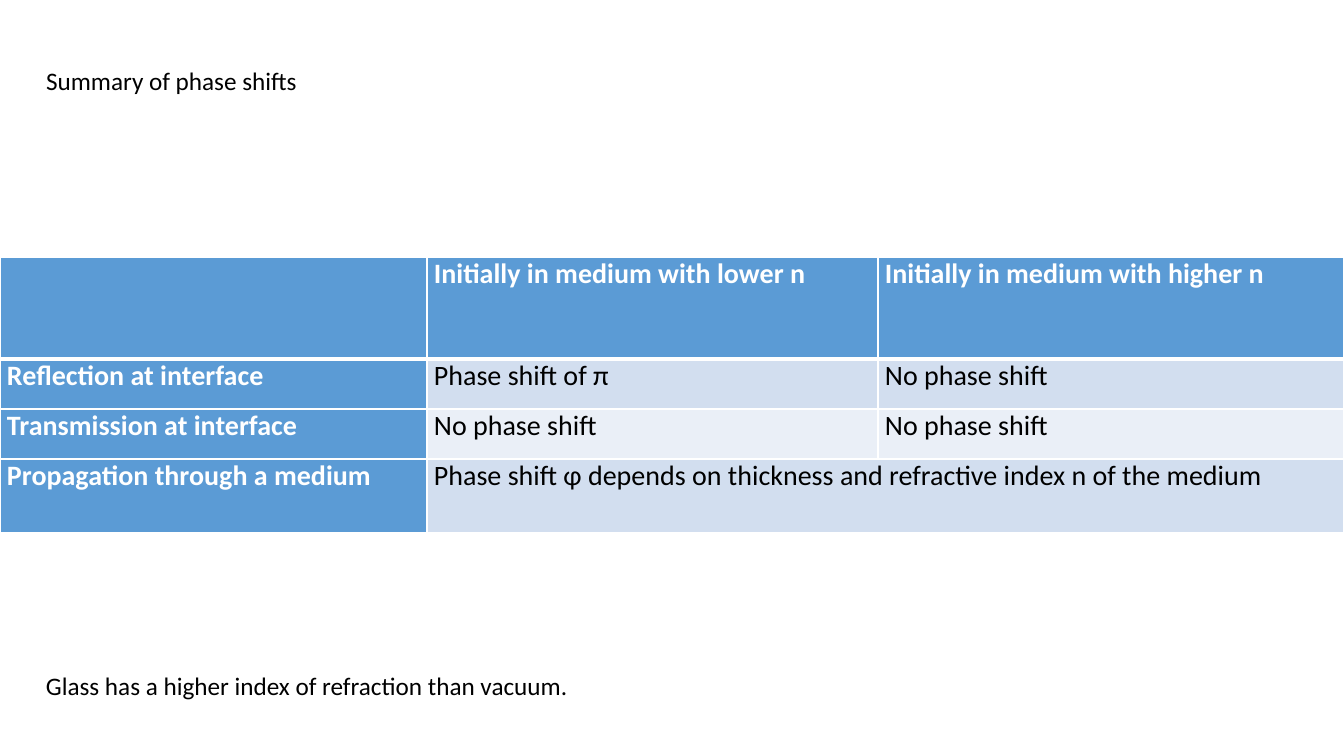
from pptx import Presentation
from pptx.dml.color import RGBColor
from pptx.enum.text import MSO_ANCHOR, PP_ALIGN
from pptx.oxml import parse_xml
from pptx.oxml.ns import nsdecls
from pptx.util import Emu, Pt

WHITE = RGBColor(0xFF, 0xFF, 0xFF)
BLACK = RGBColor(0, 0, 0)
BLUE = RGBColor(0x5B, 0x9B, 0xD5)
BANDS = [RGBColor(0xD2, 0xDE, 0xEF), RGBColor(0xEA, 0xEF, 0xF7)]
FONT = "Calibri"

COLS = [427, 451, 466]
ROWS = [102, 50, 50, 74]
CELLS = [
    ["", "Initially in medium with lower n", "Initially in medium with higher n"],
    ["Reflection at interface", "Phase shift of π", "No phase shift"],
    ["Transmission at interface", "No phase shift", "No phase shift"],
    ["Propagation through a medium",
     "Phase shift φ depends on thickness and refractive index n of the medium", ""],
]


def px(n):
    return Emu(round(n * 914400 / 100.8))


def style(para, size, color, bold=False):
    font = para.font
    font.name, font.size, font.bold = FONT, Pt(size), bold
    font.color.rgb = color


def add_line(shape, text, box):
    """Fill a title or text box with one line of plain text."""
    shape.left, shape.top, shape.width, shape.height = map(px, box)
    frame = shape.text_frame
    frame.text = text
    frame.word_wrap = True
    frame.vertical_anchor = MSO_ANCHOR.TOP
    para = frame.paragraphs[0]
    para.alignment = PP_ALIGN.LEFT
    para.line_spacing = 1.0
    para.space_before = Pt(0)
    style(para, 18, BLACK)


def add_edges(cell, row):
    """Draw white cell borders, thick between header and body."""
    props = cell._tc.get_or_add_tcPr()
    thick = {0: "B", 1: "T"}.get(row)
    for side in "LRTB":
        width = Pt(3 if side == thick else 1)
        props.append(parse_xml(
            f'<a:ln{side} {nsdecls("a")} w="{width}"><a:solidFill>'
            f'<a:srgbClr val="{WHITE}"/></a:solidFill></a:ln{side}>'))


def fill_cell(cell, text, row, col):
    head = row == 0 or col == 0
    add_edges(cell, row)
    cell.fill.solid()
    cell.fill.fore_color.rgb = BLUE if head else BANDS[(row - 1) % 2]
    cell.margin_left = cell.margin_right = px(7)
    cell.margin_top = cell.margin_bottom = 0
    cell.text = text
    para = cell.text_frame.paragraphs[0]
    para.alignment = PP_ALIGN.JUSTIFY
    style(para, 20, WHITE if head else BLACK, head)


def add_grid(slide, left, top):
    """Place the table of phase shifts."""
    table = slide.shapes.add_table(
        len(ROWS), len(COLS), px(left), px(top), px(sum(COLS)), px(sum(ROWS))).table
    for col, width in zip(table.columns, COLS):
        col.width = px(width)
    for row, height in zip(table.rows, ROWS):
        row.height = px(height)
    for r, line in enumerate(CELLS):
        for c, text in enumerate(line):
            fill_cell(table.cell(r, c), text, r, c)
    table.cell(3, 1).merge(table.cell(3, 2))


def main():
    deck = Presentation()
    deck.slide_width, deck.slide_height = px(1344), px(756)
    slide = deck.slides.add_slide(deck.slide_layouts[5])

    # Table across the full width
    add_grid(slide, 0, 257)

    # Title above, note below
    add_line(slide.shapes.title, "Summary of phase shifts", (36, 60, 1083, 41))
    note = slide.shapes.add_textbox(0, 0, 0, 0)
    add_line(note, "Glass has a higher index of refraction than vacuum.",
             (36, 665, 1083, 41))

    deck.save("out.pptx")


if __name__ == "__main__":
    main()
